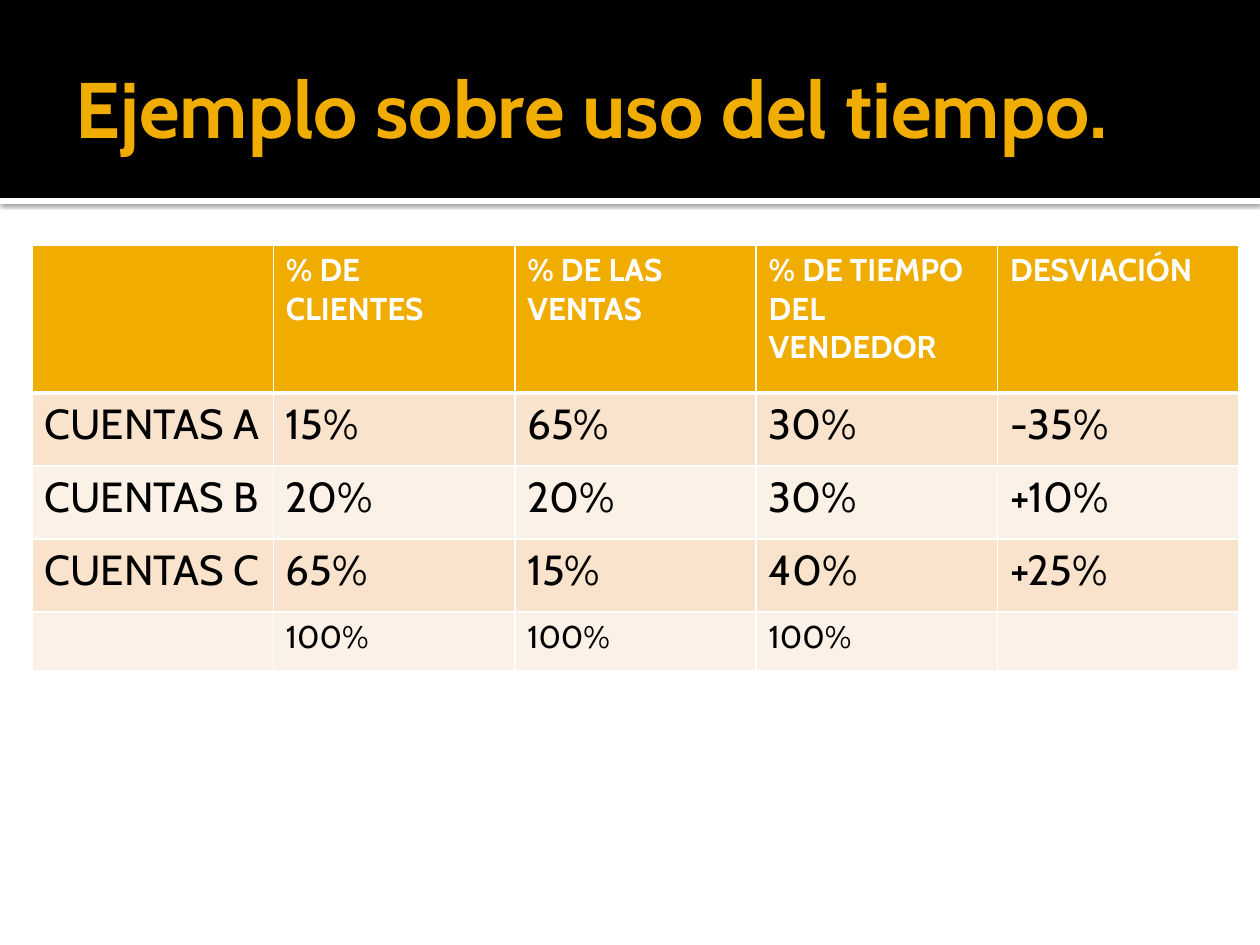
from dataclasses import dataclass

from lxml import etree
from pptx import Presentation
from pptx import util as u
from pptx.dml.color import RGBColor
from pptx.enum import shapes, text
from pptx.oxml.ns import qn

PX_PER_INCH = 126
FONT = "Cabin"
COLORS = {
    "black": "000000",
    "white": "FFFFFF",
    "amber": "F0AD00",
    "peach": "F9E3CC",
    "cream": "FCF1E7",
}


@dataclass
class Band:
    top: int
    height: int
    color: str
    shadow: bool = False


@dataclass
class AccountRow:
    cells: list[str]
    height: int
    fill: str
    size: int = 24
    color: str = "black"
    bold: bool = False
    bottom_line: int = 1


BANDS = [Band(198, 6, "white", shadow=True), Band(0, 198, "black")]
ROWS = [
    AccountRow(["", "% DE CLIENTES", "% DE LAS VENTAS", "% DE TIEMPO DEL VENDEDOR", "DESVIACIÓN"],
               148, "amber", 18, "white", bold=True, bottom_line=3),
    AccountRow(["CUENTAS A", "15%", "65%", "30%", "-35%"], 73, "peach"),
    AccountRow(["CUENTAS B", "20%", "20%", "30%", "+10%"], 73, "cream"),
    AccountRow(["CUENTAS C", "65%", "15%", "40%", "+25%"], 73, "peach"),
    AccountRow(["", "100%", "100%", "100%", ""], 59, "cream", 18),
]


def px(length: int) -> u.Emu:
    return u.Emu(round(length * 914400 / PX_PER_INCH))


def rgb(name: str) -> RGBColor:
    return RGBColor.from_string(COLORS[name])


def add_color(parent, name: str):
    solid = etree.SubElement(parent, qn("a:solidFill"))
    etree.SubElement(solid, qn("a:srgbClr"), val=COLORS[name])


def format_runs(frame, size: int, color: str, bold: bool) -> None:
    for paragraph in frame.paragraphs:
        for run in paragraph.runs:
            run.font.name = FONT
            run.font.size = u.Pt(size)
            run.font.bold = bold
            run.font.color.rgb = rgb(color)


def add_shadow(shape) -> None:
    effects = shape.element.spPr.find(qn("a:effectLst"))
    outer = etree.SubElement(effects, qn("a:outerShdw"), blurRad=str(u.Pt(2.5)),
                             dist=str(u.Pt(0.8)), dir="5400000", algn="tl", rotWithShape="0")
    tint = etree.SubElement(outer, qn("a:srgbClr"), val=COLORS["black"])
    etree.SubElement(tint, qn("a:alpha"), val="60000")


def draw_band(slide, band: Band) -> None:
    strip = slide.shapes.add_shape(shapes.MSO_SHAPE.RECTANGLE, 0, px(band.top),
                                   px(1260), px(band.height))
    strip.shadow.inherit = False
    strip.fill.solid()
    strip.fill.fore_color.rgb = rgb(band.color)
    strip.line.fill.background()
    if band.shadow:
        add_shadow(strip)
    # Bands lie behind the title
    slide.shapes.title.element.addprevious(strip.element)


def draw_title(slide, wording: str) -> None:
    title = slide.shapes.title
    title.left, title.top, title.width, title.height = px(63), px(21), px(1134), px(173)
    frame = title.text_frame
    frame.text = wording
    frame.word_wrap = True
    frame.vertical_anchor = text.MSO_ANCHOR.MIDDLE
    frame.margin_left = u.Inches(0.1)
    frame.margin_right = frame.margin_top = frame.margin_bottom = u.Inches(0.05)
    frame.paragraphs[0].alignment = text.PP_ALIGN.LEFT
    format_runs(frame, 45, "amber", True)


def draw_cell(cell, wording: str, row: AccountRow) -> None:
    cell.text_frame.text = wording
    format_runs(cell.text_frame, row.size, row.color, row.bold)
    properties = cell._tc.get_or_add_tcPr()
    for side, points in {"L": 1, "R": 1, "T": 1, "B": row.bottom_line}.items():
        border = etree.SubElement(properties, qn(f"a:ln{side}"), w=str(u.Pt(points)))
        add_color(border, "white")
    cell.fill.solid()
    cell.fill.fore_color.rgb = rgb(row.fill)


def draw_table(slide, rows: list[AccountRow]) -> None:
    accounts = slide.shapes.add_table(len(rows), len(rows[0].cells), px(32), px(245), px(1207),
                                      px(sum(row.height for row in rows))).table
    for r, row in enumerate(rows):
        accounts.rows[r].height = px(row.height)
        for c, wording in enumerate(row.cells):
            draw_cell(accounts.cell(r, c), wording, row)


def main() -> None:
    deck = Presentation()
    deck.slide_width, deck.slide_height = px(1260), px(945)
    slide = deck.slides.add_slide(deck.slide_layouts[5])
    # Header
    for band in BANDS:
        draw_band(slide, band)
    draw_title(slide, "Ejemplo sobre uso del tiempo.")
    # Time use by account group
    draw_table(slide, ROWS)
    deck.save("out.pptx")


if __name__ == "__main__":
    main()
